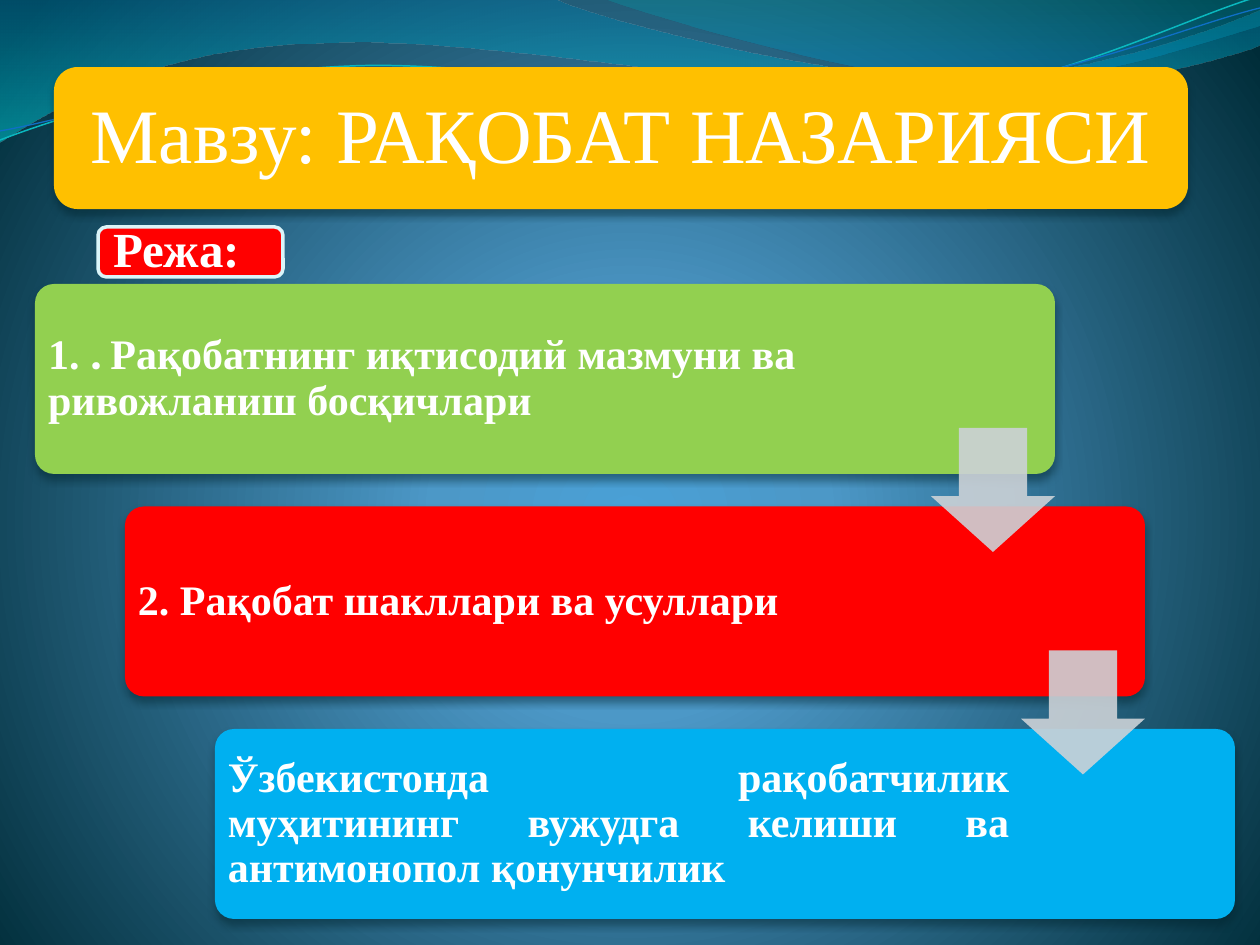
from lxml.etree import SubElement
from pptx import Presentation
from pptx.dml.color import RGBColor
from pptx.enum.shapes import MSO_SHAPE
from pptx.enum.text import MSO_ANCHOR, PP_ALIGN
from pptx.oxml.ns import qn
from pptx.util import Pt

SCALE = 914400 / 126
PAGE = (1260, 945)
COLORS = {
    "white": "FFFFFF", "gold": "FFC000", "green": "92D050", "red": "FF0000",
    "sky": "00B0F0", "gray": "CCD2D7", "pale": "DBF5F9", "shadow": "00232C",
    "glow": "4AA0D6", "mid": "4C98C7", "deep": "002C38", "blue": "0074A1",
    "cyan": "00C6CF", "teal": "00A1A9", "azure": "008BBF",
    "aqua line": "0AB8BF", "blue line": "0F6FC6",
}
WAVES = [
    ((0, 0), [[(554, -1)], [(600, 21), (837, 79), (955, 79)],
              [(1075, 79), (1207, 33), (1260, 11)], [(1261, 45)],
              [(1239, 55), (1096, 96), (940, 95)],
              [(784, 95), (481, 35), (324, 43)],
              [(163, 45), (58, 105), (-1, 142)], [(0, 0)]],
     [(0, "blue", 45), (100, "cyan", 55)]),
    ((604, -1), [[(641, 14), (859, 78), (969, 82)],
                 [(1079, 87), (1211, 40), (1260, 26)], [(1260, 0)], [(604, -1)]],
     [(0, "teal", 30), (80, "azure", 45)]),
]
RIBBONS = [
    ((0, 140), [[(60, 117), (199, 72), (349, 66)],
                [(498, 59), (747, 112), (898, 101)],
                [(1050, 89), (1182, 19), (1257, -3)]], "aqua line", 0.85),
    ((0, 131), [[(59, 121), (207, 77), (357, 71)],
                [(508, 64), (752, 106), (903, 95)],
                [(1053, 84), (1186, 26), (1260, 8)]], "blue line", 0.75),
]
STEPS = [
    ("green", 827, PP_ALIGN.LEFT,
     [("1. ", "Times New Roman"), (". ", "Vollkorn"),
      ("Рақобатнинг иқтисодий мазмуни ва ривожланиш босқичлари", "Times New Roman")]),
    ("red", 807, PP_ALIGN.LEFT,
     [("2. Рақобат шакллари ва усуллари", "Times New Roman")]),
    ("sky", 807, PP_ALIGN.JUSTIFY,
     [("Ўзбекистонда рақобатчилик муҳитининг вужудга келиши ва "
       "антимонопол қонунчилик", "Times New Roman")]),
]


def emu(pixels):
    return round(pixels * SCALE)


def color(name):
    return RGBColor.from_string(COLORS[name])


def set_alpha(fill, percent):
    SubElement(fill[0], qn("a:alpha"), val=str(percent * 1000))


def solid_fill(element):
    return next(element.iter(qn("a:solidFill")))


def set_gradient(element, stops, center=None):
    solid = solid_fill(element)
    gradient = solid.makeelement(qn("a:gradFill"), {"rotWithShape": "1"})
    stop_list = SubElement(gradient, qn("a:gsLst"))
    for position, name, opacity in stops:
        stop = SubElement(stop_list, qn("a:gs"), pos=str(position * 1000))
        SubElement(stop, qn("a:srgbClr"), val=COLORS[name])
        if opacity < 100:
            set_alpha(stop, opacity)
    if center:
        circle = SubElement(gradient, qn("a:path"), path="circle")
        sides = {side: str(value * 1000) for side, value in zip("ltrb", center)}
        SubElement(circle, qn("a:fillToRect"), sides)
    else:
        SubElement(gradient, qn("a:lin"), ang="5400000", scaled="1")
    solid.getparent().replace(solid, gradient)


def add_curve(page, start, segments, close):
    points = [(emu(x), emu(y)) for segment in segments for x, y in segment]
    builder = page.shapes.build_freeform(*map(emu, start), scale=1.0)
    builder.add_line_segments(points, close=close)
    shape = builder.convert_to_shape()
    shape.shadow.inherit = False
    lines = iter(list(shape.element.iter(qn("a:lnTo"))))
    for segment in segments:
        parts = [next(lines) for point in segment]
        if len(parts) == 3:
            bezier = parts[0].makeelement(qn("a:cubicBezTo"), {})
            parts[0].addprevious(bezier)
            for part in parts:
                bezier.append(part[0])
                part.getparent().remove(part)
    return shape


def add_backdrop(page):
    page.background.fill.solid()
    page.background.fill.fore_color.rgb = color("glow")
    set_gradient(page.element, [(0, "glow", 100), (25, "mid", 100), (100, "deep", 100)],
                 center=(10, 110, 10, 100))
    for start, segments, stops in WAVES:
        wave = add_curve(page, start, segments, True)
        wave.line.fill.background()
        wave.fill.solid()
        wave.fill.fore_color.rgb = color(stops[0][1])
        set_gradient(wave.element, stops)
    for start, segments, name, width in RIBBONS:
        ribbon = add_curve(page, start, segments, False)
        ribbon.fill.background()
        ribbon.line.color.rgb = color(name)
        ribbon.line.width = Pt(width)


def add_panel(page, box, fill, kind=MSO_SHAPE.ROUNDED_RECTANGLE, adjust=(),
              outline=None, shadow=False):
    panel = page.shapes.add_shape(kind, *map(emu, box))
    for index, value in enumerate(adjust):
        panel.adjustments[index] = value
    panel.fill.solid()
    panel.fill.fore_color.rgb = color(fill)
    if outline:
        panel.line.color.rgb = color(outline)
        panel.line.width = Pt(2)
    else:
        panel.line.fill.background()
    panel.shadow.inherit = False
    if shadow:
        effects = next(panel.element.iter(qn("a:effectLst")))
        outer = SubElement(effects, qn("a:outerShdw"), blurRad=str(Pt(4.5)),
                           dist=str(Pt(3)), dir="5400000", rotWithShape="0")
        SubElement(outer, qn("a:srgbClr"), val=COLORS["shadow"])
        set_alpha(outer, 48)
    return panel


def add_text(page, box, spans, size, bold=True, align=PP_ALIGN.LEFT, inset=13):
    frame = page.shapes.add_textbox(*map(emu, box)).text_frame
    frame.word_wrap = True
    frame.vertical_anchor = MSO_ANCHOR.MIDDLE
    frame.margin_left = frame.margin_right = emu(inset)
    frame.margin_top = frame.margin_bottom = emu(inset)
    para = frame.paragraphs[0]
    para.alignment = align
    para.line_spacing = 0.9
    for text, font in spans:
        span = para.add_run()
        span.text = text
        span.font.name = font
        span.font.size = Pt(size)
        span.font.bold = bold
        span.font.color.rgb = color("white")


def add_title(page, box):
    add_panel(page, box, "gold", shadow=True)
    add_text(page, box, [("Мавзу: РАҚОБАТ НАЗАРИЯСИ", "Times New Roman")], 44,
             bold=False, align=PP_ALIGN.CENTER, inset=23)


def add_steps(page, box):
    left, top, width, height = box
    step_width, step_height, arrow = 1020, 190, 124
    gaps = len(STEPS) - 1
    across, down = (width - step_width) / gaps, (height - step_height) / gaps
    corners = [(left + i * across, top + i * down) for i in range(len(STEPS))]
    for (x, y), (fill, text_width, align, spans) in zip(corners, STEPS):
        add_panel(page, (x, y, step_width, step_height), fill, adjust=[0.1], shadow=True)
        add_text(page, (x, y, text_width, step_height), spans, 24, align=align)
    for x, y in corners[:-1]:
        pointer = add_panel(page, (x + step_width - arrow, y + 144, arrow, arrow), "gray",
                            kind=MSO_SHAPE.DOWN_ARROW, adjust=(0.55, 0.45))
        set_alpha(solid_fill(pointer.element), 90)


def add_plan_label(page, box):
    add_panel(page, box, "red", outline="pale")
    add_text(page, box, [("Режа:", "Times New Roman")], 28, inset=15)


def main():
    deck = Presentation()
    deck.slide_width, deck.slide_height = map(emu, PAGE)
    page = deck.slides.add_slide(deck.slide_layouts[6])
    add_backdrop(page)
    add_title(page, (54, 67, 1134, 142))
    add_steps(page, (35, 284, 1200, 635))
    add_plan_label(page, (98, 227, 185, 50))
    deck.save("out.pptx")


if __name__ == "__main__":
    main()
